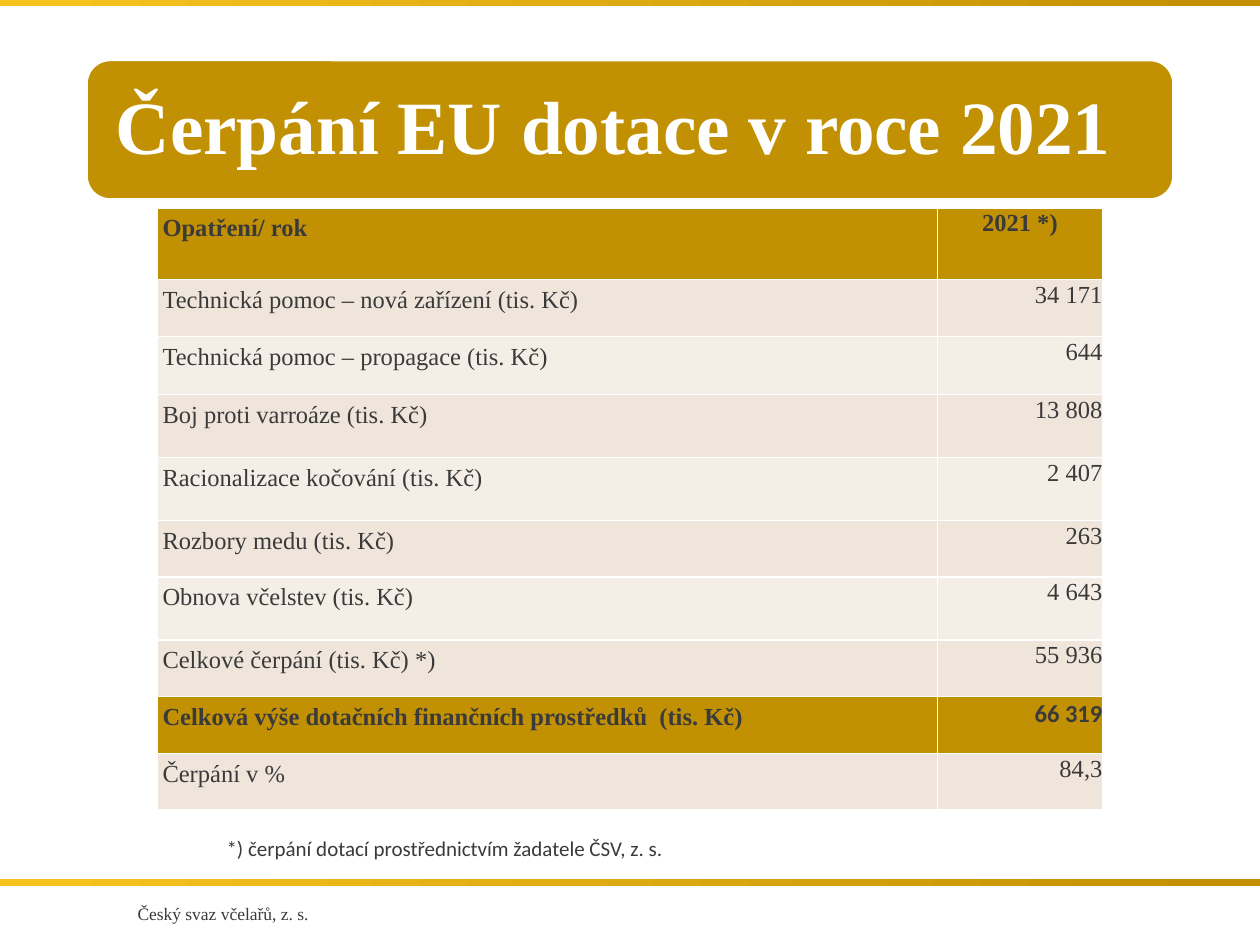
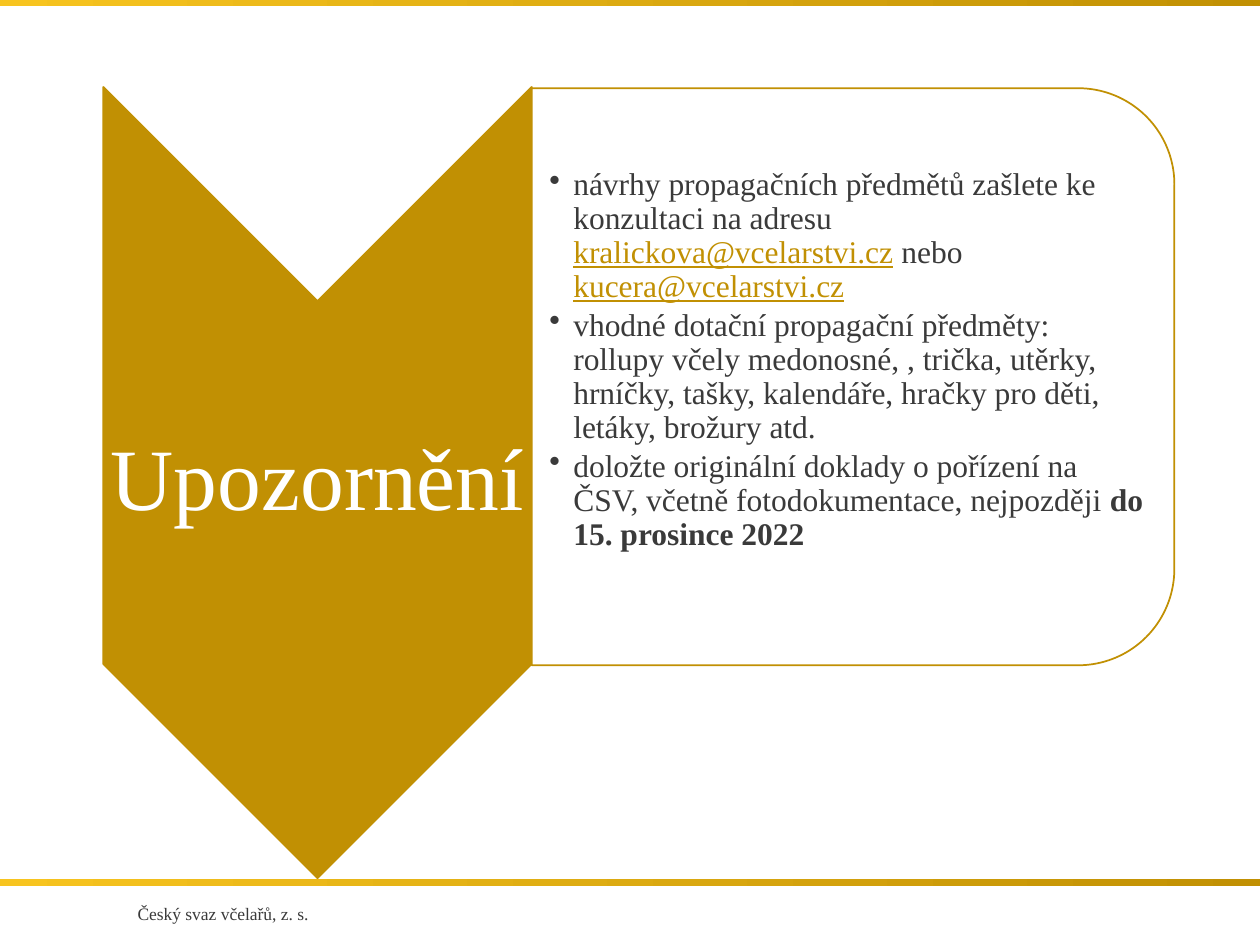
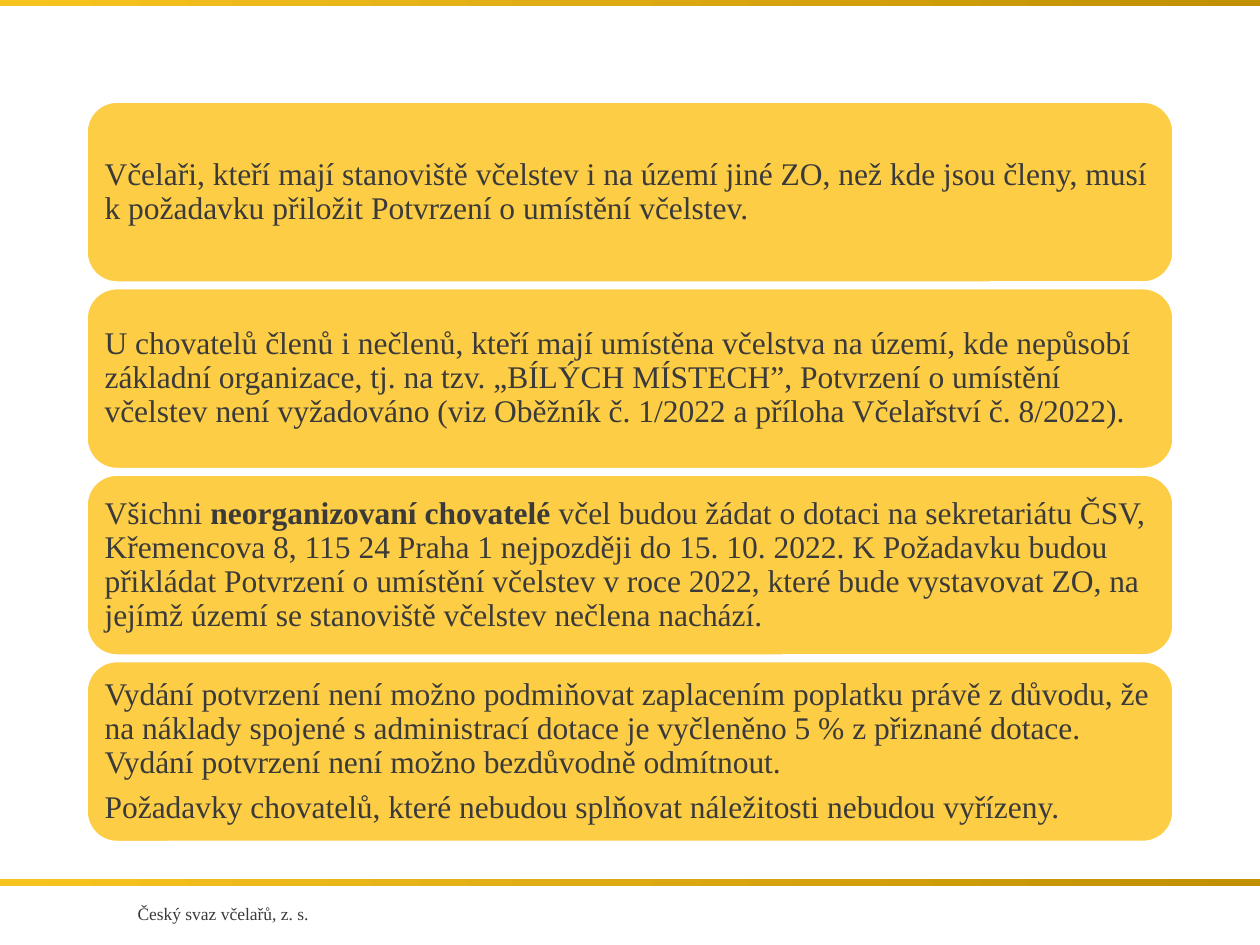
import pptx
import pptx.util
import pptx.dml.color
import pptx.enum.shapes
import pptx.enum.text
from lxml import etree

Inches, Pt = pptx.util.Inches, pptx.util.Pt
SHAPE = pptx.enum.shapes.MSO_SHAPE
ALIGN = pptx.enum.text.PP_ALIGN
ANCHOR = pptx.enum.text.MSO_ANCHOR

# Shared look
GOLD, YELLOW, BRIGHT = "C19003", "FCCD45", "F7C41F"
WHITE, INK = "FFFFFF", "3A3A3A"
STRIPES = ["F0E5DA", "F4EEE7"]
SERIF, SANS = "Times New Roman", "Calibri"
BODY = dict(name=SERIF, size=Pt(18), color=INK)
TITLE_ONLY, BLANK = 5, 6
LEFT, WIDTH = 0.69, 8.62

# Slide content
TABLE_ROWS = [
    ("Opatření/ rok", "2021 *)", 0.57),
    ("Technická pomoc – nová zařízení (tis. Kč)", "34 171", 0.45),
    ("Technická pomoc – propagace (tis. Kč)", "644", 0.46),
    ("Boj proti varroáze (tis. Kč)", "13 808", 0.5),
    ("Racionalizace kočování (tis. Kč)", "2 407", 0.5),
    ("Rozbory medu (tis. Kč)", "263", 0.45),
    ("Obnova včelstev (tis. Kč)", "4 643", 0.5),
    ("Celkové čerpání (tis. Kč) *)", "55 936", 0.45),
    ("Celková výše dotačních finančních prostředků  (tis. Kč)", "66 319", 0.45),
    ("Čerpání v %", "84,3", 0.45),
]
HEADER_ROW, TOTAL_ROW = 0, 8

BOLD = dict(bold=True)
MAIL = dict(color=GOLD, underline=True)
NOTICES = [
    [("návrhy propagačních předmětů zašlete ke konzultaci na adresu ", {}),
     ("kralickova@vcelarstvi.cz", MAIL), (" nebo ", {}),
     ("kucera@vcelarstvi.cz", MAIL)],
    [("vhodné dotační propagační předměty: rollupy včely medonosné, , trička, "
      "utěrky, hrníčky, tašky, kalendáře, hračky pro děti, letáky, brožury atd.", {})],
    [("doložte originální doklady o pořízení na ČSV, včetně fotodokumentace, "
      "nejpozději ", {}), ("do 15. prosince 2022", BOLD)],
]
RULES = [
    [[("Včelaři, kteří mají stanoviště včelstev i na území jiné ZO, než kde jsou "
       "členy, musí k požadavku přiložit Potvrzení o umístění včelstev.", {})]],
    [[("U chovatelů členů i nečlenů, kteří mají umístěna včelstva na území, kde "
       "nepůsobí základní organizace, tj. na tzv. „BÍLÝCH MÍSTECH”, Potvrzení o "
       "umístění včelstev není vyžadováno (viz Oběžník č. 1/2022 a příloha "
       "Včelařství č. 8/2022).", {})]],
    [[("Všichni ", {}), ("neorganizovaní chovatelé ", BOLD),
      ("včel budou žádat o dotaci na sekretariátu ČSV, Křemencova 8, 115 24 Praha 1 "
       "nejpozději do 15. 10. 2022. K Požadavku budou přikládat Potvrzení o umístění "
       "včelstev v roce 2022, které bude vystavovat ZO, na jejímž území se stanoviště "
       "včelstev nečlena nachází.", {})]],
    [[("Vydání potvrzení není možno podmiňovat zaplacením poplatku právě z důvodu, že "
       "na náklady spojené s administrací dotace je vyčleněno 5 % z přiznané dotace. "
       "Vydání potvrzení není možno bezdůvodně odmítnout.", {})],
     [("Požadavky chovatelů, které nebudou splňovat náležitosti nebudou vyřízeny.", {})]],
]


def rgb(color):
    return pptx.dml.color.RGBColor.from_string(color)


def set_attrs(target, values):
    for name, value in values.items():
        if name == "color":
            target.color.rgb = rgb(value)
        else:
            setattr(target, name, value)


def add_bullet(p, indent):
    pPr = p._p.get_or_add_pPr()
    pPr.set("marL", str(Inches(indent)))
    pPr.set("indent", str(-Inches(indent)))
    bullet = etree.SubElement(pPr, pptx.oxml.ns.qn("a:buChar"))
    bullet.set("char", "•")


def write(tf, paras, font, para=None, inset=None, anchor=ANCHOR.TOP, bullet=0):
    """Fill a frame with paragraphs, each a list of (text, font changes)."""
    frame = dict(word_wrap=True, vertical_anchor=anchor)
    if inset is not None:
        sides = inset if isinstance(inset, tuple) else (inset,) * 4
        names = ("margin_left", "margin_top", "margin_right", "margin_bottom")
        frame.update(zip(names, map(Inches, sides)))
    set_attrs(tf, frame)
    for i, runs in enumerate(paras):
        p = tf.add_paragraph() if i else tf.paragraphs[0]
        if bullet:
            add_bullet(p, bullet)
        set_attrs(p, para or {})
        for text, changes in runs:
            r = p.add_run()
            r.text = text
            set_attrs(r.font, {**font, **changes})


def add_shape(s, kind, box, fill, line=None):
    sp = s.shapes.add_shape(kind, *map(Inches, box))
    sp.shadow.inherit = False
    sp.fill.solid()
    sp.fill.fore_color.rgb = rgb(fill)
    if line:
        sp.line.color.rgb = rgb(line)
        sp.line.width = Pt(1)
    else:
        sp.line.fill.background()
    return sp


def add_turned(s, kind, box, fill, line):
    """Add a shape turned a quarter so that it covers the box as seen."""
    x, y, w, h = box
    sp = add_shape(s, kind, (x + (w - h) / 2, y + (h - w) / 2, h, w), fill, line)
    sp.rotation = 90
    return sp


def add_text(s, box, paras, font, **options):
    sp = s.shapes.add_textbox(*map(Inches, box))
    write(sp.text_frame, paras, font, **options)


def place_title(s, box, text, size, align, inset):
    sp = s.shapes.title
    s.shapes._spTree.append(sp._element)  # in front of its backing shape
    sp.left, sp.top, sp.width, sp.height = map(Inches, box)
    sp.text_frame.auto_size = pptx.enum.text.MSO_AUTO_SIZE.NONE
    write(sp.text_frame, [[(text, {})]], dict(name=SERIF, size=Pt(size), color=WHITE),
          para=dict(alignment=align, line_spacing=0.9), inset=inset, anchor=ANCHOR.MIDDLE)
    return sp


def new_slide(prs, layout):
    """Start a slide with the gradient bands and the footer."""
    s = prs.slides.add_slide(prs.slide_layouts[layout])
    for y in (6.98, 0):
        band = add_shape(s, SHAPE.RECTANGLE, (0, y, 10, 0.05), GOLD)
        band.fill.gradient()
        band.fill.gradient_angle = 180
        for stop, color in zip(band.fill.gradient_stops, (GOLD, BRIGHT)):
            stop.color.rgb = rgb(color)
    add_text(s, (0.54, 7.12, 2.46, 0.27), [[("Český svaz včelařů, z. s.", {})]],
             dict(name=SERIF, size=Pt(10), color=INK), para=dict(alignment=ALIGN.CENTER))
    return s


def title_bar(s, box, text):
    x, y, w, h = box
    add_shape(s, SHAPE.ROUNDED_RECTANGLE, box, GOLD, WHITE)
    title = place_title(s, (x + 0.05, y + 0.05, w - 0.1, h - 0.1), text, 43,
                        ALIGN.LEFT, 0.18)
    title.text_frame.paragraphs[0].runs[0].font.bold = True


def subsidy_table(s, x, y, col_widths):
    height = sum(row[2] for row in TABLE_ROWS)
    box = (x, y, sum(col_widths), height)
    table = s.shapes.add_table(len(TABLE_ROWS), 2, *map(Inches, box)).table
    table.first_row = table.horz_banding = False
    for column, width in zip(table.columns, col_widths):
        column.width = Inches(width)
    for i, (label, value, row_height) in enumerate(TABLE_ROWS):
        table.rows[i].height = Inches(row_height)
        strong = i in (HEADER_ROW, TOTAL_ROW)
        value_align = ALIGN.CENTER if i == HEADER_ROW else ALIGN.RIGHT
        value_font = SANS if i == TOTAL_ROW else SERIF
        columns = [(label, ALIGN.LEFT, 0.04, SERIF), (value, value_align, 0, value_font)]
        for j, (text, align, inset, face) in enumerate(columns):
            cell = table.cell(i, j)
            cell.fill.solid()
            cell.fill.fore_color.rgb = rgb(GOLD if strong else STRIPES[(i + 1) % 2])
            cell.margin_left = cell.margin_right = Inches(inset)
            cell.margin_top = cell.margin_bottom = Inches(inset)
            write(cell.text_frame, [[(text, {})]],
                  dict(name=face, size=Pt(14), color=INK, bold=strong),
                  para=dict(alignment=align, line_spacing=1.07))


def notice(s, box, arrow_width, panel_height):
    """Downward chevron with the title, and a panel of bullets on its right."""
    x, y, w, h = box
    add_turned(s, SHAPE.CHEVRON, (x, y, arrow_width, h), GOLD, GOLD)
    place_title(s, (x, y + arrow_width / 2, arrow_width, h - arrow_width),
                "Upozornění", 50, ALIGN.CENTER, 0.03)
    panel_x, panel_w = x + arrow_width, w - arrow_width
    add_turned(s, SHAPE.ROUND_2_SAME_RECTANGLE,
               (panel_x, y + 0.01, panel_w, panel_height), WHITE, GOLD)
    add_text(s, (panel_x, y + 0.23, panel_w - 0.23, panel_height - 0.7), NOTICES, BODY,
             para=dict(line_spacing=0.9, space_after=Pt(2.7)),
             inset=(0.14, 0.01, 0.01, 0.01), anchor=ANCHOR.MIDDLE, bullet=0.19)


def rule_cards(s, x, y, w, card_height, gap):
    for i, paras in enumerate(RULES):
        top = y + i * (card_height + gap)
        sp = add_shape(s, SHAPE.ROUNDED_RECTANGLE, (x, top, w, card_height), YELLOW, WHITE)
        write(sp.text_frame, paras, BODY, inset=0.07, anchor=ANCHOR.MIDDLE,
              para=dict(alignment=ALIGN.LEFT, line_spacing=0.9, space_after=Pt(6.3)))


def main():
    prs = pptx.Presentation()
    prs.slide_width, prs.slide_height = Inches(10), Inches(7.5)

    # Subsidy use in 2021
    s = new_slide(prs, TITLE_ONLY)
    title_bar(s, (LEFT, 0.48, WIDTH, 1.1), "Čerpání EU dotace v roce 2021")
    subsidy_table(s, 1.25, 1.65, (6.19, 1.31))
    add_text(s, (1.7, 6.58, 5, 0.3),
             [[("*) čerpání dotací prostřednictvím žadatele ČSV, z. s.", {})]],
             dict(name=SANS, size=Pt(12), color=INK))

    # Notice
    s = new_slide(prs, TITLE_ONLY)
    notice(s, (0.82, 0.69, 8.5, 6.28), arrow_width=3.4, panel_height=4.58)

    # Rules for applicants
    s = new_slide(prs, BLANK)
    rule_cards(s, LEFT, 0.81, WIDTH, card_height=1.43, gap=0.05)

    prs.save("out.pptx")


if __name__ == "__main__":
    main()
